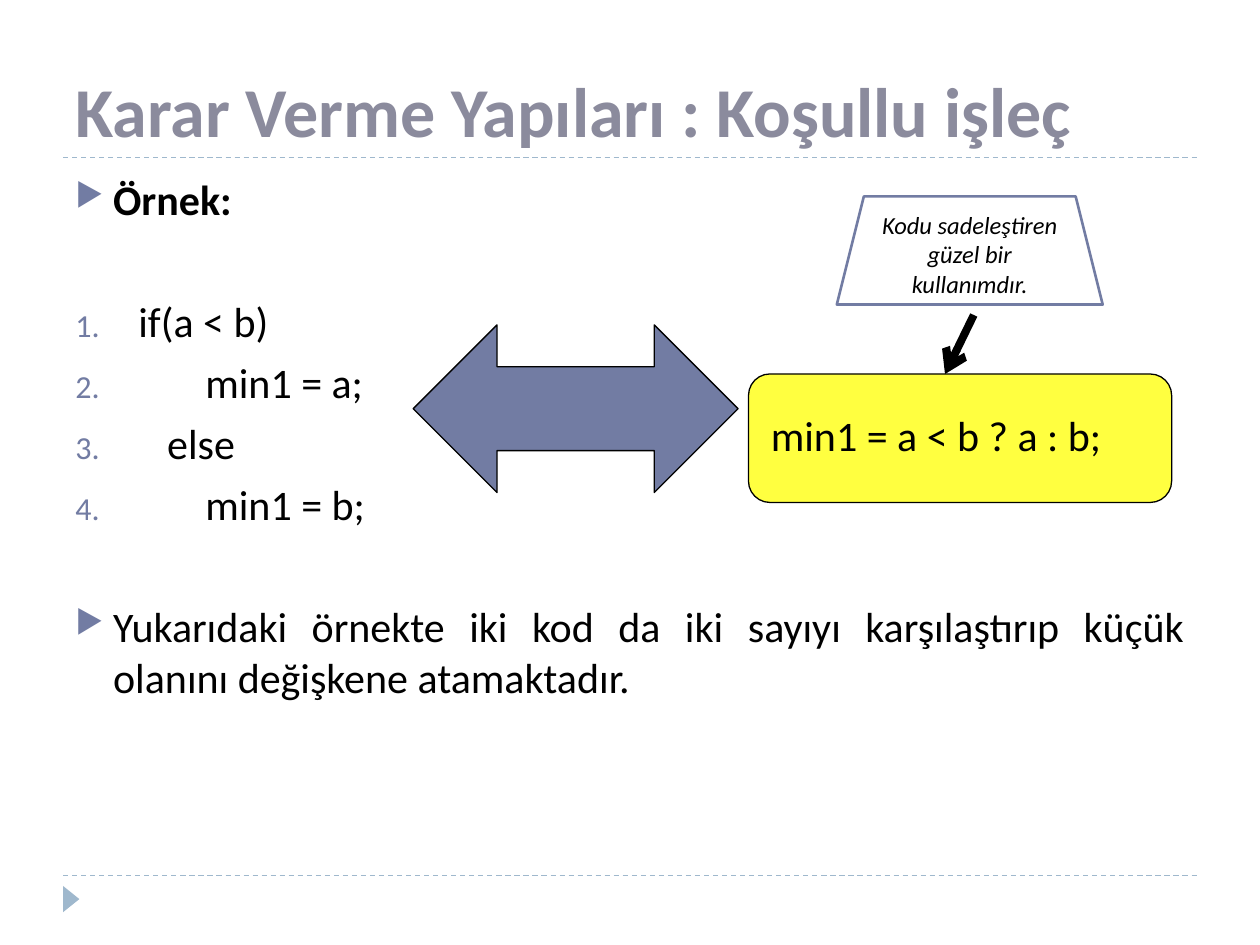
from lxml.etree import SubElement
from pptx import Presentation
from pptx.dml.color import RGBColor
from pptx.enum.dml import MSO_LINE
from pptx.enum.shapes import MSO_CONNECTOR, MSO_SHAPE
from pptx.enum.text import MSO_ANCHOR, PP_ALIGN
from pptx.oxml.ns import qn
from pptx.util import Cm, Pt

HUES = {"title": "8B8B9D", "main": "727CA3", "rule": "9FB8CD",
        "ink": "000000", "note": "FFFFFF", "code": "FFFF00"}
CODE = [("if(a < b)", 1.27), ("min1 = a;", 2.62),
        ("else", 1.85), ("min1 = b;", 2.62)]


def hue(name):
    """Return the named colour."""
    return RGBColor.from_string(HUES[name])


def apply(item, form):
    """Set each attribute in a dict of format values."""
    for key, value in form.items():
        setattr(item, key, value)


def write(para, text, size, tint="ink", **form):
    """Add one run of styled text to a paragraph."""
    run = para.add_run()
    run.text = text
    apply(run.font, {"name": "Calibri", "size": Pt(size), **form})
    run.font.color.rgb = hue(tint)


def label(shapes, box, **form):
    """Add a wrapping text box and return its frame."""
    frame = shapes.add_textbox(*map(Cm, box)).text_frame
    apply(frame, {"word_wrap": True, **form})
    return frame


def block(shapes, kind, box, fill, edge=None, width=0.75):
    """Add a flat preset shape."""
    shape = shapes.add_shape(kind, *map(Cm, box))
    shape.shadow.inherit = False
    shape.fill.solid()
    shape.fill.fore_color.rgb = hue(fill)
    if edge:
        shape.line.color.rgb = hue(edge)
        shape.line.width = Pt(width)
    else:
        shape.line.fill.background()
    return shape


def stroke(shapes, ends, tint, width):
    """Add a straight line without a shadow."""
    line = shapes.add_connector(MSO_CONNECTOR.STRAIGHT, *map(Cm, ends))
    line.line.color.rgb = hue(tint)
    line.line.width = Pt(width)
    SubElement(line._element.spPr, qn("a:effectLst"))
    return line


def mark(para, left, hang, tag, **value):
    """Give a paragraph a hanging bullet or number."""
    props = para._p.get_or_add_pPr()
    props.set("marL", str(Cm(left)))
    props.set("indent", str(-Cm(hang)))
    tone = SubElement(props, qn("a:buClr"))
    SubElement(tone, qn("a:srgbClr"), val=HUES["main"])
    SubElement(props, qn("a:buSzPct"), val="76000")
    SubElement(props, qn(tag), **value)


def frame(shapes, box):
    """Draw the two dashed rules and the corner marker."""
    left, top, width, height = box
    for y in (top, top + height):
        line = stroke(shapes, (left, y, left + width, y), "rule", 0.75)
        line.line.dash_style = MSO_LINE.DASH
    spot = (left - 0.1, top + height + 0.31, 0.53, 0.33)
    block(shapes, MSO_SHAPE.ISOSCELES_TRIANGLE, spot, "rule").rotation = 90


def head(shapes, box):
    """Write the slide title."""
    text = label(shapes, box, vertical_anchor=MSO_ANCHOR.BOTTOM)
    write(text.paragraphs[0], "Karar Verme Yapıları : Koşullu işleç",
          40, "title", bold=True)


def body(shapes, box):
    """Write the example code and its explanation."""
    text = label(shapes, box)
    rows = [("Örnek:", 0.76, 6, True)]
    rows += [(line, left, 6 if i else 41, False)
             for i, (line, left) in enumerate(CODE)]
    rows.append(("Yukarıdaki örnekte iki kod da iki sayıyı karşılaştırıp "
                 "küçük olanını değişkene atamaktadır.", 0.76, 41, False))
    for i, (line, left, gap, bold) in enumerate(rows):
        para = text.add_paragraph() if i else text.paragraphs[0]
        apply(para, {"alignment": PP_ALIGN.JUSTIFY, "space_before": Pt(gap)})
        if 0 < i <= len(CODE):
            mark(para, left, left, "a:buAutoNum", type="arabicPeriod")
        else:
            mark(para, left, left, "a:buChar", char="▶")
        write(para, line, 24, bold=bold)


def short(shapes, box):
    """Draw the one-line form with its note and pointer."""
    left, top, width, height = box
    group = shapes.add_group_shape().shapes
    card = block(group, MSO_SHAPE.ROUNDED_RECTANGLE,
                 (left, top + 3.58, width, height - 3.58), "code", "ink")
    tone = card.fill._xPr.find(qn("a:solidFill"))[0]
    SubElement(tone, qn("a:alpha"), val="75000")
    text = label(group, (left + 0.2, top + 4.17, 7.95, 1.27))
    write(text.paragraphs[0], "min1 = a < b ? a : b;", 24)
    arrow = stroke(group, (left + 4.54, top + 2.39, left + 3.96, top + 3.58),
                   "ink", 4.5)
    SubElement(arrow.line._get_or_add_ln(), qn("a:tailEnd"), type="arrow")
    note = block(group, MSO_SHAPE.TRAPEZOID, (left + 1.78, top, 5.36, 2.18),
                 "note", "main", 1.5).text_frame
    apply(note, {"word_wrap": True, "vertical_anchor": MSO_ANCHOR.MIDDLE,
                 "margin_left": Cm(0.35), "margin_right": Cm(0.35)})
    note.paragraphs[0].alignment = PP_ALIGN.CENTER
    write(note.paragraphs[0], "Kodu sadeleştiren güzel bir kullanımdır.",
          14, italic=True)


def main():
    """Build and save the slide."""
    deck = Presentation()
    apply(deck, {"slide_width": Cm(25.4), "slide_height": Cm(19.05)})
    shapes = deck.slides.add_slide(deck.slide_layouts[6]).shapes
    frame(shapes, (1.27, 3.18, 22.86, 14.47))
    head(shapes, (1.27, 0.43, 22.86, 2.74))
    body(shapes, (1.27, 3.38, 22.86, 13.72))
    block(shapes, MSO_SHAPE.LEFT_RIGHT_ARROW, (8.33, 6.55, 6.55, 3.38),
          "main", "ink")
    short(shapes, (15.09, 3.96, 8.53, 6.17))
    deck.save("out.pptx")


if __name__ == "__main__":
    main()
